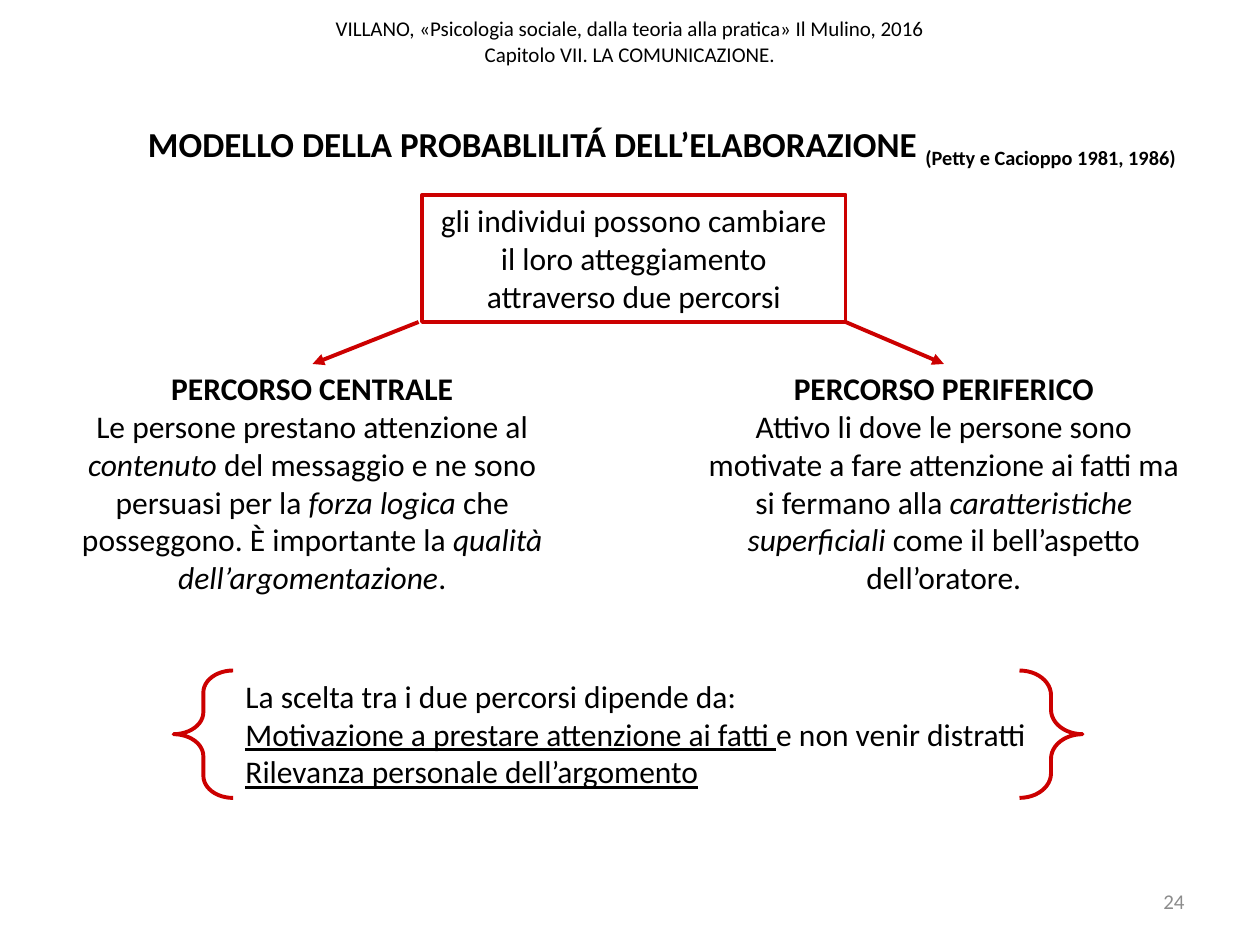
import pptx
import pptx.util
import pptx.dml.color
import pptx.enum.shapes
import pptx.enum.text
import pptx.oxml
import pptx.oxml.ns
from dataclasses import dataclass

Pt = pptx.util.Pt
Shape = pptx.enum.shapes.MSO_SHAPE
Align = pptx.enum.text.PP_ALIGN
Anchor = pptx.enum.text.MSO_ANCHOR


@dataclass(frozen=True)
class Theme:
    font: str = "Calibri"
    ink: str = "000000"
    grey: str = "8C8C8C"
    red: str = "CC0000"
    small: float = 12
    body: float = 18
    head: float = 20
    line: float = 2.25


theme = Theme()


def color(code):
    return pptx.dml.color.RGBColor.from_string(code)


def write(frame, paras, size=theme.body, ink=theme.ink, align=Align.CENTER,
          anchor=Anchor.TOP, wrap=True):
    """Each paragraph is a list of (text, style); style letters: b, i, u, s (subscript)."""
    frame.word_wrap = wrap
    frame.auto_size = pptx.enum.text.MSO_AUTO_SIZE.NONE
    frame.vertical_anchor = anchor
    frame.margin_left = frame.margin_right = Pt(7.2)
    frame.margin_top = frame.margin_bottom = Pt(3.6)
    for n, parts in enumerate(paras):
        para = frame.add_paragraph() if n else frame.paragraphs[0]
        para.alignment = align
        font = para.font
        font.name, font.size = theme.font, Pt(size)
        font.color.rgb = color(ink)
        for text, style in parts:
            # A vertical tab in the text becomes a line break
            for k, piece in enumerate(text.split("\v")):
                if k:
                    para.add_line_break()
                run = para.add_run()
                run.text = piece
                run.font.name, run.font.size = theme.font, Pt(size)
                run.font.color.rgb = color(ink)
                run.font.bold = "b" in style
                run.font.italic = "i" in style
                run.font.underline = "u" in style
                if "s" in style:
                    run.font._element.set("baseline", "-25000")


def label(slide, box, paras, **look):
    item = slide.shapes.add_textbox(*map(Pt, box))
    write(item.text_frame, paras, **look)


def outline(slide, kind, box):
    item = slide.shapes.add_shape(kind, *map(Pt, box))
    item.shadow.inherit = False
    item.fill.background()
    item.line.color.rgb = color(theme.red)
    item.line.width = Pt(theme.line)
    return item


def arrow(slide, start, end):
    item = slide.shapes.add_connector(
        pptx.enum.shapes.MSO_CONNECTOR.STRAIGHT, *map(Pt, start + end))
    item.line.color.rgb = color(theme.red)
    item.line.width = Pt(theme.line)
    tip = pptx.oxml.parse_xml(
        f'<a:tailEnd {pptx.oxml.ns.nsdecls("a")} type="triangle"/>')
    item.line._get_or_add_ln().append(tip)
    item._element.spPr.append(
        pptx.oxml.parse_xml(f'<a:effectLst {pptx.oxml.ns.nsdecls("a")}/>'))


def title(slide, box):
    item = slide.shapes.title
    item.left, item.top, item.width, item.height = map(Pt, box)
    write(item.text_frame, [[
        ("MODELLO DELLA PROBABLILITÁ DELL’ELABORAZIONE ", "b"),
        ("(Petty e Cacioppo 1981, 1986)", "bs")]], size=theme.head, wrap=False)


def premise(slide, box):
    """Framed statement with an arrow from each lower corner."""
    x, y, w, h = box
    item = outline(slide, Shape.RECTANGLE, box)
    write(item.text_frame, [[(
        "gli individui possono cambiare il loro atteggiamento "
        "attraverso due percorsi", "")]])
    foot = y + h
    arrow(slide, (x - 2, foot), (x - 62.6, foot + 24))
    arrow(slide, (x + w, foot), (x + w + 56.2, foot + 24))


def route(slide, box, name, parts):
    label(slide, box, [[(name, "b")], parts])


def choice(slide, box):
    """Deciding factors between two braces."""
    x, y, w, h = box
    left, right = 34, 36
    label(slide, (x + left, y, w - left - right, h), [
        [("La scelta tra i due percorsi dipende da:", "")],
        [("Motivazione a prestare attenzione ai fatti ", "u"),
         ("e non venir distratti", "")],
        [("Rilevanza personale dell’argomento", "u")],
    ], align=Align.LEFT, wrap=False)
    for kind, edge, wide, curve in (
            (Shape.LEFT_BRACE, x, left, 0.37),
            (Shape.RIGHT_BRACE, x + w - right, right, 0.39)):
        brace = outline(slide, kind, (edge, y, wide, h))
        brace.adjustments[0] = curve


def main():
    deck = pptx.Presentation()
    deck.slide_width, deck.slide_height = Pt(720), Pt(540)
    slide = deck.slides.add_slide(deck.slide_layouts[5])

    # Book reference and page number
    label(slide, (0, -7.8, 720, 62.6), [[(
        "VILLANO, «Psicologia sociale, dalla teoria alla pratica» Il Mulino, 2016\v"
        "Capitolo VII. LA COMUNICAZIONE.", "")]],
        size=theme.small, anchor=Anchor.MIDDLE)
    label(slide, (516, 500.5, 168, 28.8), [[("24", "")]], size=theme.small,
          ink=theme.grey, align=Align.RIGHT, anchor=Anchor.MIDDLE)

    title(slide, (65.2, 66.2, 626.4, 31.6))
    premise(slide, (241.2, 111.4, 242, 72.6))

    # The two routes
    route(slide, (36.6, 207.4, 283.6, 138.2), "PERCORSO CENTRALE", [
        ("Le persone prestano attenzione al", ""), (" contenuto ", "i"),
        ("del messaggio e ne sono persuasi per la ", ""),
        ("forza logica ", "i"), ("che posseggono. È importante la ", ""),
        ("qualità dell’argomentazione", "i"), (".", "")])
    route(slide, (394.6, 207.4, 289.4, 138.2), "PERCORSO PERIFERICO", [
        ("Attivo li dove le persone sono motivate a fare attenzione "
         "ai fatti ma si fermano alla ", ""),
        ("caratteristiche superficiali ", "i"),
        ("come il bell’aspetto dell’oratore.", "")])

    choice(slide, (99.2, 383.2, 519.4, 72.8))
    deck.save("out.pptx")


if __name__ == "__main__":
    main()
